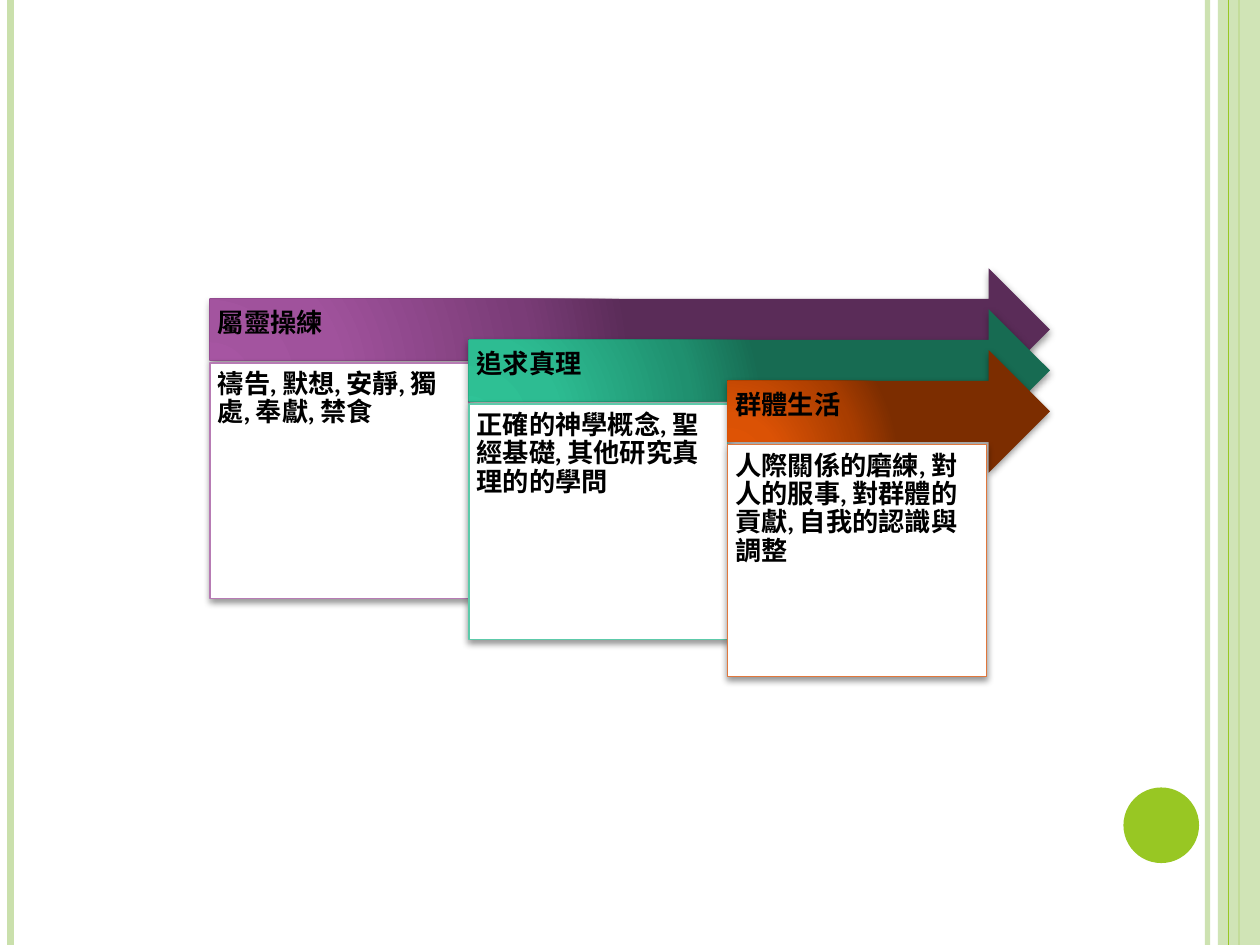
from pptx import Presentation
from pptx import util as u
from pptx.dml.color import RGBColor
from pptx.enum import lang, shapes, text
from pptx.oxml import parse_xml
from pptx.oxml.ns import nsdecls, qn

Pt = u.Pt
NS = nsdecls("a")
KIND = shapes.MSO_SHAPE
FONT = {"name": "Cambria", "size": Pt(15), "bold": True,
        "language_id": lang.MSO_LANGUAGE_ID.TRADITIONAL_CHINESE}
PARA = {"line_spacing": 0.9, "space_after": Pt(5.25), "alignment": text.PP_ALIGN.LEFT}
STAGES = [
    ("屬靈操練", "禱告, 默想, 安靜, 獨處, 奉獻, 禁食", 134.8, "B77BB4",
     ("A655A2", "A0529C", "7A3C77", "5A2C58")),
    ("追求真理", "正確的神學概念, 聖經基礎, 其他研究真理的的學問", 134.8, "5DCAAA",
     ("2FC397", "2DBC92", "1F906F", "176B52")),
    ("群體生活", "人際關係的磨練, 對人的服事, 對群體的貢獻, 自我的認識與調整", 132.5, "E0773C",
     ("E35505", "DB5205", "A83D00", "7C2D00")),
]


def put(obj, vals):
    for key, val in vals.items():
        setattr(obj, key, val)


def tint(fmt, color, alpha=None):
    fmt.solid()
    fmt.fore_color.rgb = RGBColor.from_string(color)
    if alpha:
        clr = fmt._xPr.find(qn("a:solidFill"))[0]
        clr.append(parse_xml(f'<a:alpha {NS} val="{alpha * 1000}"/>'))


def add(slide, kind, box, color=None, alpha=None):
    shp = slide.shapes.add_shape(kind, *map(Pt, box))
    shp.shadow.inherit = False
    shp.line.fill.background()
    if color:
        tint(shp.fill, color, alpha)
    return shp


def rule(slide, x, high, color, width, alpha=None):
    line = slide.shapes.add_connector(shapes.MSO_CONNECTOR.STRAIGHT, Pt(x), 0, Pt(x), Pt(high))
    line.line.width = Pt(width)
    tint(line.line.fill, color, alpha)
    line._element.spPr.append(parse_xml(f"<a:effectLst {NS}/>"))


def shade(shp):
    glow = shp._element.spPr.find(qn("a:effectLst"))
    glow.append(parse_xml(
        f'<a:outerShdw {NS} blurRad="{Pt(4)}" dist="{Pt(1.6)}" dir="5400000" rotWithShape="0">'
        '<a:srgbClr val="000000"><a:alpha val="42000"/></a:srgbClr></a:outerShdw>'))


def blend(shp, colors):
    stops = "".join(f'<a:gs pos="{pos * 1000}"><a:srgbClr val="{color}"/></a:gs>'
                    for pos, color in zip((0, 30, 75, 100), colors))
    shp.fill.background()
    old = shp._element.spPr.find(qn("a:noFill"))
    old.getparent().replace(old, parse_xml(
        f'<a:gradFill {NS} rotWithShape="1"><a:gsLst>{stops}</a:gsLst><a:path path="circle">'
        '<a:fillToRect l="5000" t="100000" r="120000" b="10000"/></a:path></a:gradFill>'))


def write(shp, words, anchor, right, low):
    frame = shp.text_frame
    put(frame, {"word_wrap": True, "vertical_anchor": anchor, "margin_left": Pt(4.5),
                "margin_top": Pt(4.5), "margin_right": Pt(right), "margin_bottom": Pt(low)})
    para = frame.paragraphs[0]
    put(para, PARA)
    run = para.add_run()
    run.text = words
    put(run.font, FONT)
    run.font.color.rgb = RGBColor.from_string("000000")


def frame(slide, wide, high):
    rule(slide, wide - 30, high, "CAE0AC", 3, 93)
    rule(slide, 6, high, "CAE0AC", 4.5)
    rule(slide, wide - 12, high, "98C723", 1.5)
    add(slide, KIND.RECTANGLE, (wide - 24, 0, 24, high), "CAE0AC", 87)
    rule(slide, wide - 18, high, "98C723", 0.75)
    add(slide, KIND.OVAL, (wide - 78, high - 90, 43.2, 43.2), "98C723")


def stage(slide, x, y, wide, step, data):
    head, body, high, edge, colors = data
    arrow = add(slide, KIND.RIGHT_ARROW, (x, y, wide, 70))
    blend(arrow, colors)
    shade(arrow)
    write(arrow, head, text.MSO_ANCHOR.MIDDLE, 20, 10.8)
    card = add(slide, KIND.RECTANGLE, (x, y + 54, step, high), "FFFFFF")
    tint(card.line.fill, edge)
    card.line.width = Pt(1)
    shade(card)
    write(card, body, text.MSO_ANCHOR.TOP, 4.5, 4.5)


def steps(slide, x, y, wide):
    step, drop = 147.9, 23.4
    for i, data in enumerate(STAGES):
        stage(slide, x + i * step, y + i * drop, wide - i * step, step, data)


def main():
    prs = Presentation()
    put(prs, {"slide_width": Pt(720), "slide_height": Pt(540)})
    slide = prs.slides.add_slide(prs.slide_layouts[6])
    frame(slide, 720, 540)
    steps(slide, 120, 153.3, 480)
    prs.save("out.pptx")


if __name__ == "__main__":
    main()
